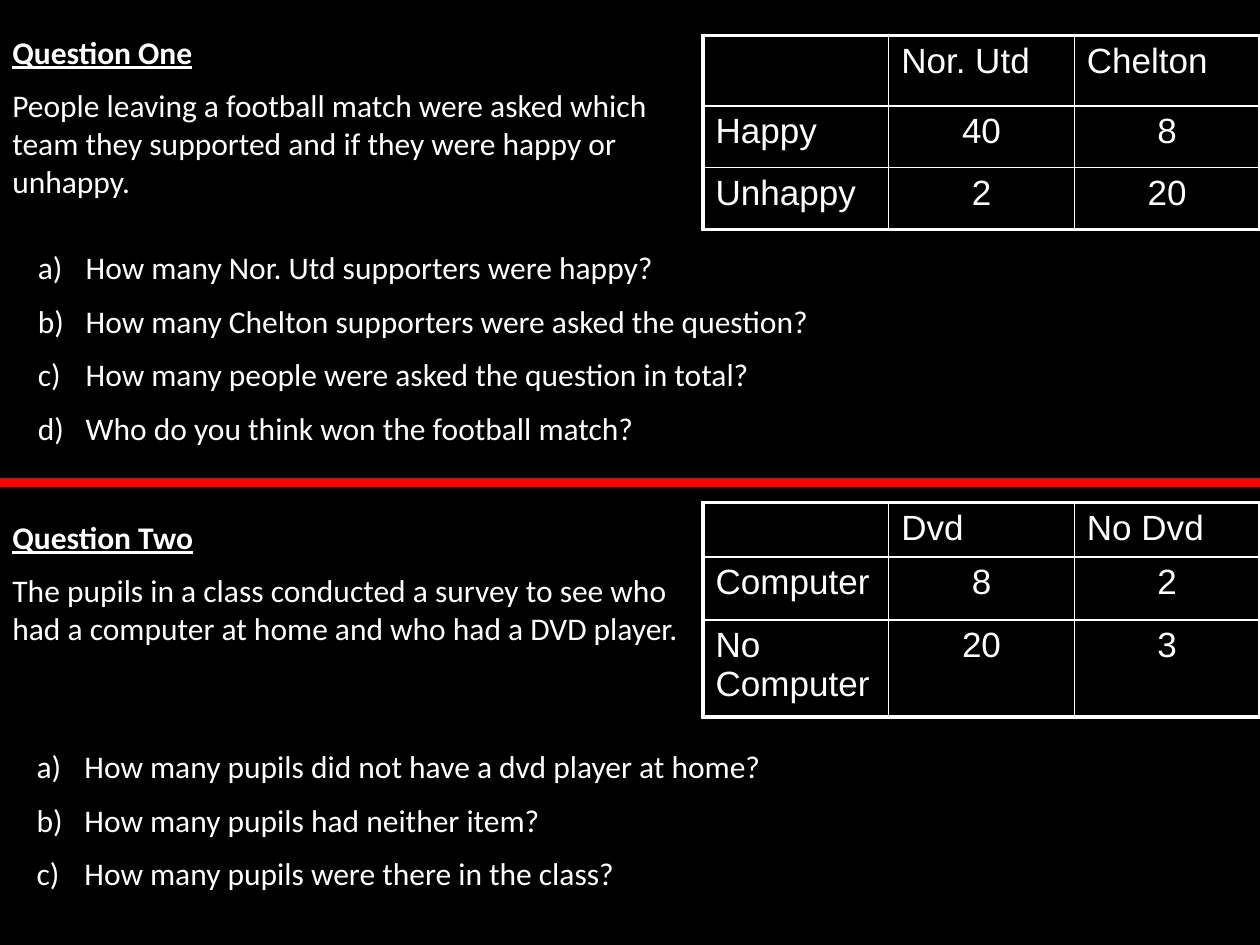
from lxml import etree
from pptx import Presentation
from pptx.dml.color import RGBColor
from pptx.enum import shapes, text
from pptx.oxml import ns
from pptx.util import Inches, Pt

BLACK = RGBColor(0x00, 0x00, 0x00)
WHITE = RGBColor(0xFF, 0xFF, 0xFF)
RED = RGBColor(0xFF, 0x00, 0x00)

# Content: places are (left, top, width, height) in inches
QUESTIONS = [
    {
        "heading": "Question One",
        "intro": "People leaving a football match were asked which team "
                 "they supported and if they were happy or unhappy.",
        "intro_at": (0, 0.21, 5.47, 1.46),
        "table": [["", "Nor. Utd", "Chelton"],
                  ["Happy", "40", "8"],
                  ["Unhappy", "2", "20"]],
        "table_top": 0.28,
        "row_heights": [0.56, 0.49, 0.49],
        "parts": ["How many Nor. Utd supporters were happy?",
                  "How many Chelton supporters were asked the question?",
                  "How many people were asked the question in total?",
                  "Who do you think won the football match?"],
        "parts_at": (0.2, 1.92, 8.82, 1.76),
    },
    {
        "heading": "Question Two",
        "intro": "The pupils in a class conducted a survey to see who had "
                 "a computer at home and who had a DVD player.",
        "intro_at": (0, 4.06, 5.55, 1.16),
        "table": [["", "Dvd", "No Dvd"],
                  ["Computer", "8", "2"],
                  ["No Computer", "20", "3"]],
        "table_top": 3.99,
        "row_heights": [0.43, 0.5, 0.77],
        "parts": ["How many pupils did not have a dvd player at home?",
                  "How many pupils had neither item?",
                  "How many pupils were there in the class?"],
        "parts_at": (0.19, 5.88, 9.29, 1.3),
    },
]
TABLE_LEFT, TABLE_WIDTH = 5.58, 4.42
DIVIDER_Y = 3.83
INDENT = Inches(0.38)


def set_font(para, name, size):
    para.font.name, para.font.size = name, Pt(size)
    para.font.color.rgb = WHITE


def write_paragraphs(frame, lines):
    frame.word_wrap = True
    frame.auto_size = text.MSO_AUTO_SIZE.NONE
    for i, line in enumerate(lines):
        para = frame.paragraphs[0] if i == 0 else frame.add_paragraph()
        para.text = line
        para.space_before = Pt(9 if i else 0)
        set_font(para, "Calibri", 18)
    return frame.paragraphs


def add_intro(page, question):
    box = page.shapes.add_textbox(*map(Inches, question["intro_at"]))
    heading = write_paragraphs(
        box.text_frame, [question["heading"], question["intro"]])[0]
    heading.font.bold = heading.font.underline = True


def fill_parts(body, question):
    left, top, width, height = map(Inches, question["parts_at"])
    body.left, body.top, body.width, body.height = left, top, width, height
    for para in write_paragraphs(body.text_frame, question["parts"]):
        props = para._p.get_or_add_pPr()
        props.set("marL", str(INDENT))
        props.set("indent", str(-INDENT))
        number = etree.Element(ns.qn("a:buAutoNum"), type="alphaLcParenR")
        props.find(ns.qn("a:spcBef")).addnext(number)


def set_borders(cell, widths):
    props = cell._tc.get_or_add_tcPr()
    for i, (side, width) in enumerate(zip("LRTB", widths)):
        line = etree.Element(ns.qn(f"a:ln{side}"), w=str(Pt(width)))
        fill = etree.SubElement(line, ns.qn("a:solidFill"))
        etree.SubElement(fill, ns.qn("a:srgbClr"), val=str(WHITE))
        props.insert(i, line)


def add_results(page, question):
    rows, heights = question["table"], question["row_heights"]
    last_row, last_col = len(rows) - 1, len(rows[0]) - 1
    table = page.shapes.add_table(
        len(rows), len(rows[0]), Inches(TABLE_LEFT),
        Inches(question["table_top"]), Inches(TABLE_WIDTH),
        Inches(sum(heights))).table
    table.first_row = table.horz_banding = False
    for r, values in enumerate(rows):
        table.rows[r].height = Inches(heights[r])
        for c, value in enumerate(values):
            cell = table.cell(r, c)
            cell.fill.background()
            # Thick lines only on the outer edge
            outer = (c == 0, c == last_col, r == 0, r == last_row)
            set_borders(cell, [2.25 if edge else 1 for edge in outer])
            para = cell.text_frame.paragraphs[0]
            set_font(para, "Arial", 20)
            if value:
                para.text = value
            if r and c:
                para.alignment = text.PP_ALIGN.CENTER


def add_divider(page, deck):
    y = Inches(DIVIDER_Y)
    divider = page.shapes.add_connector(
        shapes.MSO_CONNECTOR.STRAIGHT, 0, y, deck.slide_width, y)
    divider.line.color.rgb = RED
    divider.line.width = Pt(5)
    etree.SubElement(divider._element.spPr, ns.qn("a:effectLst"))


def main():
    deck = Presentation()
    deck.slide_width, deck.slide_height = Inches(10), Inches(7.5)
    page = deck.slides.add_slide(deck.slide_layouts.get_by_name("Two Content"))
    page.background.fill.solid()
    page.background.fill.fore_color.rgb = BLACK

    # Each question has its own heading, so the slide title is not needed
    title, *bodies = page.placeholders
    title._element.getparent().remove(title._element)

    for question, body in zip(QUESTIONS, bodies):
        add_intro(page, question)
        add_results(page, question)
        fill_parts(body, question)
    add_divider(page, deck)
    deck.save("out.pptx")


if __name__ == "__main__":
    main()
